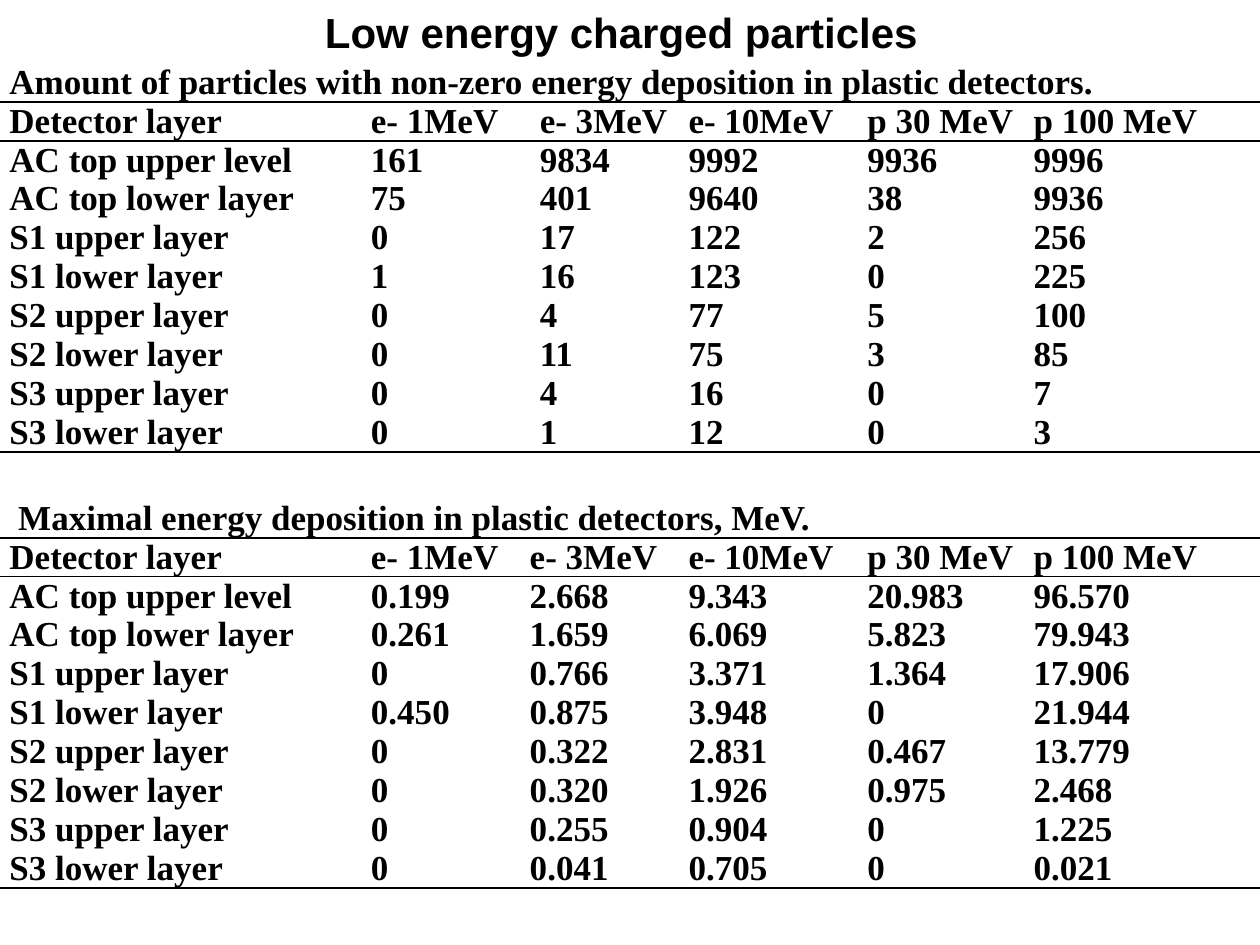
"""Build a slide with two tables of particle counts and energy deposition."""
from lxml import etree
from pptx import Presentation
from pptx.dml.color import RGBColor
from pptx.enum.text import MSO_ANCHOR, MSO_AUTO_SIZE
from pptx.oxml.ns import qn
from pptx.util import Pt

TOP = MSO_ANCHOR.TOP
GROW = MSO_AUTO_SIZE.SHAPE_TO_FIT_TEXT
BLACK = "000000"
HEADS = ["Detector layer", "e- 1MeV", "e- 3MeV", "e- 10MeV", "р 30 MeV", "р 100 MeV"]
LAYERS = ["AC top upper level", "AC top lower layer"] + [
    f"S{num} {side} layer" for num in (1, 2, 3) for side in ("upper", "lower")]
COUNTS = [
    "161 9834 9992 9936 9996",
    "75 401 9640 38 9936",
    "0 17 122 2 256",
    "1 16 123 0 225",
    "0 4 77 5 100",
    "0 11 75 3 85",
    "0 4 16 0 7",
    "0 1 12 0 3",
]
PEAKS = [
    "0.199 2.668 9.343 20.983 96.570",
    "0.261 1.659 6.069 5.823 79.943",
    "0 0.766 3.371 1.364 17.906",
    "0.450 0.875 3.948 0 21.944",
    "0 0.322 2.831 0.467 13.779",
    "0 0.320 1.926 0.975 2.468",
    "0 0.255 0.904 0 1.225",
    "0 0.041 0.705 0 0.021",
]
TABLES = [
    ("Amount of particles with non-zero energy deposition in plastic detectors.",
     36, [206.6, 96.5, 85, 102.2, 95, 134.7], COUNTS),
    (" Maximal energy deposition in plastic detectors, MeV.",
     285.1, [206.6, 90.75, 90.75, 102.2, 95, 134.7], PEAKS),
]


def color(code):
    return RGBColor.from_string(code)


def write(frame, text, font="Times New Roman", size=20, ink=BLACK):
    run = frame.paragraphs[0].add_run()
    run.text = text
    run.font.name = font
    run.font.size = Pt(size)
    run.font.bold = True
    run.font.color.rgb = color(ink)


deck = Presentation()
deck.slide_width, deck.slide_height = Pt(720), Pt(540)
slide = deck.slides.add_slide(deck.slide_layouts[6])

for title, top, widths, data in TABLES:
    rows = [[title], HEADS] + [[name, *line.split()] for name, line in zip(LAYERS, data)]
    last = len(rows) - 1
    table = slide.shapes.add_table(
        len(rows), len(widths), Pt(0), Pt(top), Pt(720), Pt(22.2 * len(rows))).table
    table.first_row = table.horz_banding = False
    for col, width in zip(table.columns, widths):
        col.width = Pt(width)
    table.cell(0, 0).merge(table.cell(0, len(widths) - 1))
    for r, texts in enumerate(rows):
        table.rows[r].height = Pt(22.2)
        ruled = {"lnT": r in (1, 2), "lnB": r in (0, 1, last)}
        for c in range(len(widths)):
            cell = table.cell(r, c)
            cell.margin_left = cell.margin_right = Pt(5.4)
            cell.margin_top = cell.margin_bottom = Pt(0)
            cell.vertical_anchor = TOP
            props = cell._tc.get_or_add_tcPr()
            for side in ("lnL", "lnR", "lnT", "lnB"):
                edge = etree.SubElement(props, qn(f"a:{side}"), w=str(Pt(1)))
                if ruled.get(side):
                    fill = etree.SubElement(edge, qn("a:solidFill"))
                    etree.SubElement(fill, qn("a:srgbClr"), val=BLACK)
                else:
                    etree.SubElement(edge, qn("a:noFill"))
            cell.fill.background()
            if c < len(texts):
                write(cell.text_frame, texts[c])

box = slide.shapes.add_textbox(Pt(178.6), Pt(0), Pt(356.4), Pt(36))
box.text_frame.word_wrap = False
box.text_frame.auto_size = GROW
write(box.text_frame, "Low energy charged particles", font="Arial", size=24)

deck.save("out.pptx")
